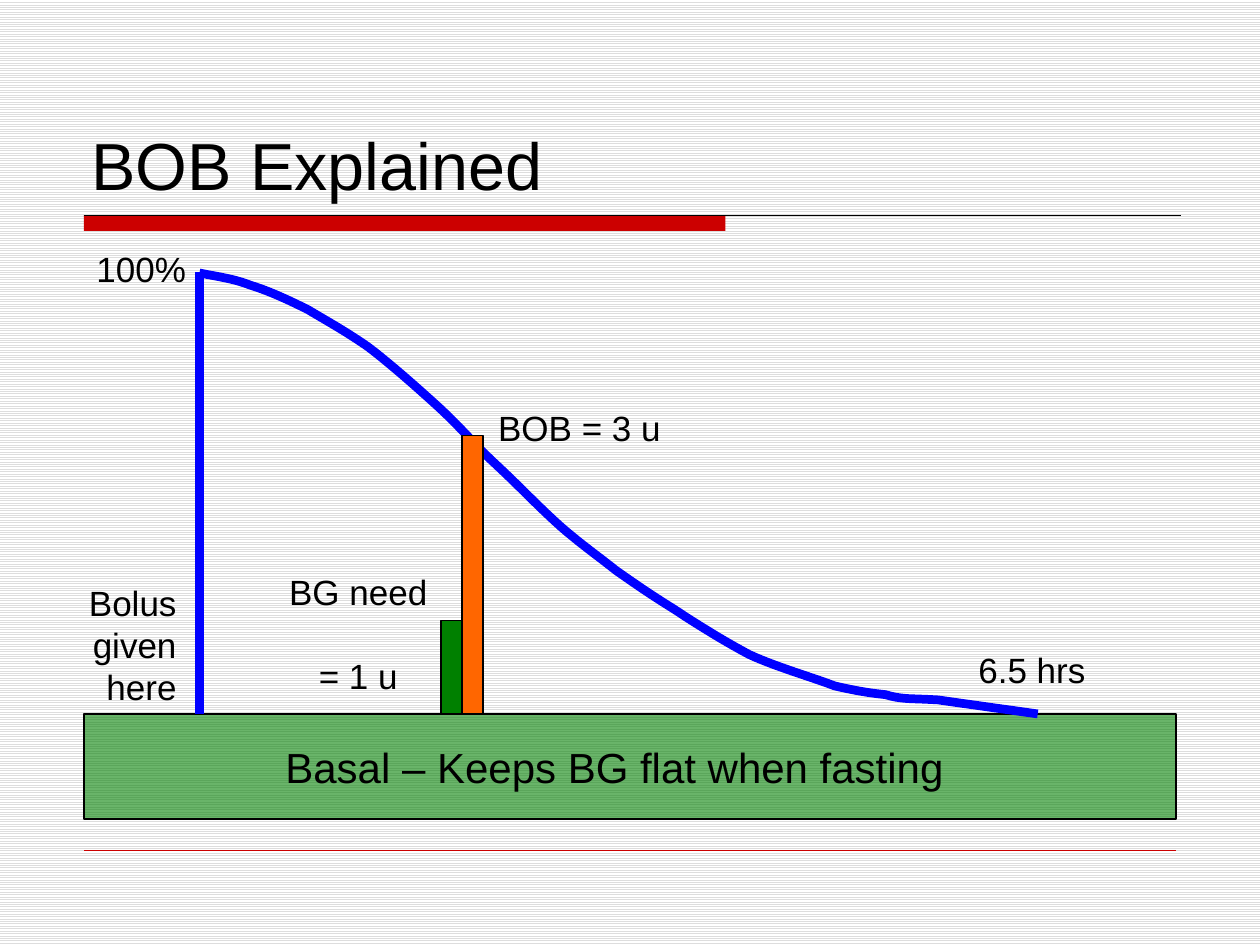
from dataclasses import dataclass

from lxml import etree
from pptx import Presentation
from pptx.dml.color import RGBColor
from pptx.enum import dml, shapes, text
from pptx.oxml import ns
from pptx.util import Pt


@dataclass(frozen=True)
class Theme:
    font: str = "Arial"
    ink: str = "000000"
    paper: str = "FFFFFF"
    stripe: str = "DDDDDD"
    red: str = "CC0000"
    green: str = "008000"
    orange: str = "FF6600"
    blue: str = "0000FF"
    title: int = 38
    basal: int = 24
    label: int = 20


def rgb(code):
    return RGBColor.from_string(code)


def bezier(p0, p1, p2, p3, steps=10):
    """Points along a cubic curve, without its start."""
    for i in range(1, steps + 1):
        t = i / steps
        weights = (1 - t) ** 3, 3 * t * (1 - t) ** 2, 3 * t * t * (1 - t), t ** 3
        yield tuple(sum(w * c for w, c in zip(weights, axis))
                    for axis in zip(p0, p1, p2, p3))


class Builder:
    def __init__(self, s, theme):
        self.s, self.theme = s, theme

    def background(self):
        fill = self.s.background.fill
        fill.patterned()
        fill.pattern = dml.MSO_PATTERN.LIGHT_HORIZONTAL
        fill.fore_color.rgb = rgb(self.theme.stripe)
        fill.back_color.rgb = rgb(self.theme.paper)

    def set_text(self, tf, words, size, align, gap=0):
        tf.text = words
        for i, p in enumerate(tf.paragraphs):
            p.alignment = align
            p.space_before = Pt(gap if i else 0)
            for r in p.runs:
                r.font.name = self.theme.font
                r.font.size = Pt(size)
                r.font.color.rgb = rgb(self.theme.ink)

    def title(self, words, x, y, w, h):
        sp = self.s.shapes.title
        sp.left, sp.top, sp.width, sp.height = Pt(x), Pt(y), Pt(w), Pt(h)
        sp.text_frame.vertical_anchor = text.MSO_ANCHOR.BOTTOM
        self.set_text(sp.text_frame, words, self.theme.title, text.PP_ALIGN.LEFT)

    def label(self, words, x, y, w, h, size=None, align=text.PP_ALIGN.LEFT,
              gap=0, wrap=False):
        tf = self.s.shapes.add_textbox(Pt(x), Pt(y), Pt(w), Pt(h)).text_frame
        tf.word_wrap = wrap
        self.set_text(tf, words, size or self.theme.label, align, gap)

    def box(self, x, y, w, h, color, outline=True, alpha=None):
        sp = self.s.shapes.add_shape(shapes.MSO_SHAPE.RECTANGLE,
                                     Pt(x), Pt(y), Pt(w), Pt(h))
        sp.shadow.inherit = False
        sp.fill.solid()
        sp.fill.fore_color.rgb = rgb(color)
        if alpha:
            clr = sp._element.spPr.find(".//" + ns.qn("a:srgbClr"))
            etree.SubElement(clr, ns.qn("a:alpha")).set("val", str(alpha * 1000))
        if outline:
            sp.line.color.rgb = rgb(self.theme.ink)
            sp.line.width = Pt(0.75)
        else:
            sp.line.fill.background()

    def line(self, x1, y1, x2, y2, color, width):
        cn = self.s.shapes.add_connector(shapes.MSO_CONNECTOR.STRAIGHT,
                                         Pt(x1), Pt(y1), Pt(x2), Pt(y2))
        cn.line.color.rgb = rgb(color)
        cn.line.width = Pt(width)
        etree.SubElement(cn._element.spPr, ns.qn("a:effectLst"))

    def curve(self, start, segments, color, width):
        points, here = [], start
        for c1, c2, end in segments:
            points.extend(bezier(here, c1, c2, end))
            here = end
        fb = self.s.shapes.build_freeform(Pt(start[0]), Pt(start[1]))
        fb.add_line_segments([(Pt(x), Pt(y)) for x, y in points], close=False)
        sp = fb.convert_to_shape()
        sp.shadow.inherit = False
        sp.fill.background()
        sp.line.color.rgb = rgb(color)
        sp.line.width = Pt(width)


# Bolus still active: two control points and an end point per segment
DECAY_START = (114, 156)
DECAY = [
    ((123, 158), (133, 159), (143, 163)),
    ((153, 166), (164, 171), (176, 177)),
    ((186, 183), (197, 189), (210, 198)),
    ((222, 207), (239, 222), (251, 233)),
    ((264, 245), (272, 255), (284, 266)),
    ((297, 278), (312, 294), (324, 304)),
    ((336, 314), (342, 318), (352, 326)),
    ((362, 333), (372, 340), (385, 348)),
    ((397, 356), (413, 366), (428, 374)),
    ((443, 381), (464, 387), (477, 392)),
    ((490, 395), (497, 396), (506, 397)),
    ((516, 400), (521, 399), (536, 400)),
    ((550, 402), (593, 408), (593, 408)),
]


def main():
    prs = Presentation()
    prs.slide_width, prs.slide_height = Pt(720), Pt(540)
    th = Theme()
    b = Builder(prs.slides.add_slide(prs.slide_layouts[5]), th)
    left, base = 48, 408

    # Page frame and title
    b.background()
    b.title("BOB Explained", 45, 24, 630, 96)
    b.box(left, 123, 366.5, 9, th.red, outline=False)
    b.line(left, 123, 675, 123, th.ink, 0.5)
    b.line(left, 486, 672, 486, th.red, 0.25)

    # Basal band
    b.box(left, base, 624, 60, th.green, alpha=59)
    b.label("Basal – Keeps BG flat when fasting", 156, 420, 426, 36,
            size=th.basal, wrap=True)

    # Bolus decay
    b.curve(DECAY_START, DECAY, th.blue, 5)
    b.line(114, base, 114, 155.5, th.blue, 5)

    # Insulin bars standing on the basal band
    for x, height, color in ((252, 53.5, th.green), (264, 159, th.orange)):
        b.box(x, base - height, 12, height, color)

    # Labels
    b.label("100%", 48, 138, 70, 32)
    b.label("6.5 hrs", 552, 367, 80, 32)
    b.label("BOB = 3 u", 277.5, 229, 112, 32)
    b.label("BG need\n= 1 u", 157.5, 322.5, 94.5, 79,
            align=text.PP_ALIGN.CENTER, gap=24)
    b.label("Bolus\ngiven\nhere", 43, 328.5, 65, 80, align=text.PP_ALIGN.RIGHT)

    prs.save("out.pptx")


if __name__ == "__main__":
    main()
